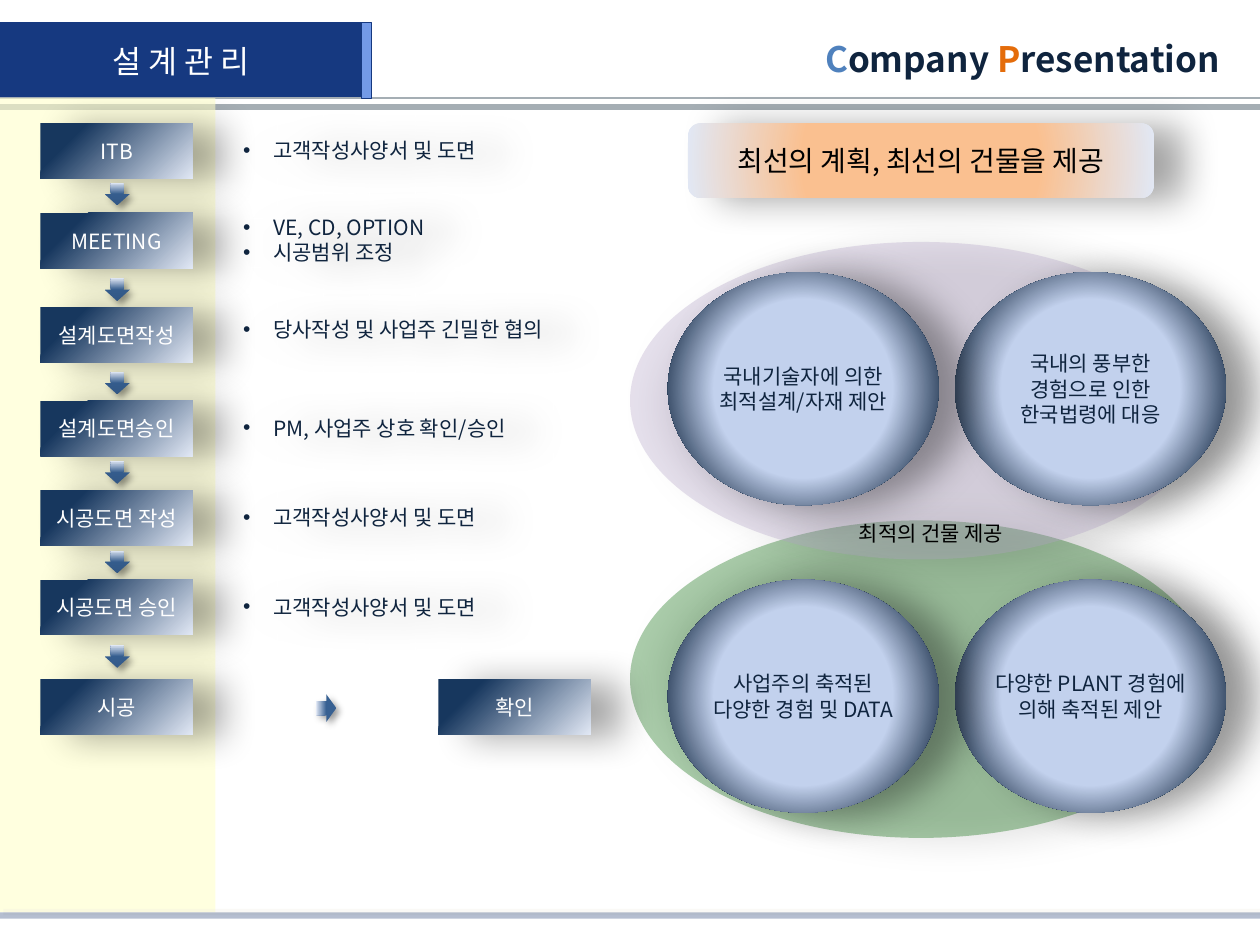
from dataclasses import dataclass

from lxml import etree
from pptx import Presentation
from pptx.dml.color import RGBColor
from pptx.enum import shapes, text
from pptx.oxml import parse_xml
from pptx.oxml.ns import nsdecls, qn
from pptx.util import Inches, Pt

FONT = "Noto Sans CJK KR"
C = {"white": "FFFFFF", "black": "000000", "navy": "0F243E", "blue": "4F81BD",
     "orange": "E46C0A", "rule": "A5AEB4", "cream": "FFFFCC", "footer": "002060",
     "title": "163980", "tab": "739AE7", "green": "006600", "purple": "B3A2C7",
     "box": "17375E", "arrow": "376092", "pale": "E1E8F5", "disc": "C2D1ED",
     "peach": "FAC090", "footer_shadow": "EEECE1"}
KIND = shapes.MSO_SHAPE


@dataclass
class Gradient:
    stops: list[tuple[int, str]]
    angle: int | None = None  # None means a circular gradient


@dataclass
class Shadow:
    color: str
    alpha: int
    blur: float
    dist: float
    angle: int


@dataclass
class Step:
    label: str
    top: float
    arrow_top: float | None = None
    note_top: float = 0
    notes: tuple[str, ...] = ()


@dataclass
class Disc:
    label: str
    left: float
    top: float


BOX_FILL = Gradient([(22, C["box"]), (100, C["pale"])], 45)
ARROW_FILL = Gradient([(50, C["arrow"]), (100, C["pale"])], 180)
DISC_FILL = Gradient([(50, C["disc"]), (86, C["navy"]), (100, C["pale"])])
BANNER_FILL = Gradient([(50, C["peach"]), (100, C["pale"])])
DEEP = Shadow(C["black"], 34, 21, 17, 6)
SMALL = Shadow(C["black"], 40, 4, 3, 45)
FOOTER = Shadow(C["footer_shadow"], 100, 0, 2.8, 315)

STEPS = [
    Step("ITB", 0.98, 1.44, 0.9, ("고객작성사양서 및 도면",)),
    Step("MEETING", 1.69, 2.2, 1.61, ("VE, CD, OPTION", "시공범위 조정")),
    Step("설계도면작성", 2.44, 2.94, 2.32, ("당사작성 및 사업주 긴밀한 협의",)),
    Step("설계도면승인", 3.18, 3.65, 3.1, ("PM, 사업주 상호 확인/승인",)),
    Step("시공도면 작성", 3.89, 4.36, 3.81, ("고객작성사양서 및 도면",)),
    Step("시공도면 승인", 4.6, 5.11, 4.52, ("고객작성사양서 및 도면",)),
    Step("시공", 5.39),
]
DISCS = [
    Disc("국내의 풍부한 경험으로 인한 한국법령에 대응", 7.58, 2.16),
    Disc("국내기술자에 의한 최적설계/자재 제안", 5.3, 2.16),
    Disc("다양한 PLANT 경험에 의해 축적된 제안", 7.58, 4.6),
    Disc("사업주의 축적된 다양한 경험 및 DATA", 5.3, 4.6),
]


def set_gradient(sp, grad: Gradient) -> None:
    sp.fill.background()
    stops = "".join(f'<a:gs pos="{pos * 1000}"><a:srgbClr val="{color}"/></a:gs>'
                    for pos, color in grad.stops)
    if grad.angle is None:
        shade = ('<a:path path="circle"><a:fillToRect l="50000" t="50000" '
                 'r="50000" b="50000"/></a:path>')
    else:
        shade = f'<a:lin ang="{grad.angle * 60000}" scaled="0"/>'
    no_fill = sp._element.spPr.find(qn("a:noFill"))
    no_fill.getparent().replace(no_fill, parse_xml(
        f'<a:gradFill {nsdecls("a")} rotWithShape="1"><a:gsLst>{stops}</a:gsLst>'
        f'{shade}</a:gradFill>'))


def set_shadow(sp, shadow: Shadow) -> None:
    sp._element.spPr.find(qn("a:effectLst")).append(parse_xml(
        f'<a:outerShdw {nsdecls("a")} blurRad="{Pt(shadow.blur)}" '
        f'dist="{Pt(shadow.dist)}" dir="{shadow.angle * 60000}" algn="tl" '
        f'rotWithShape="0"><a:srgbClr val="{shadow.color}">'
        f'<a:alpha val="{shadow.alpha * 1000}"/></a:srgbClr></a:outerShdw>'))


def add_shape(s, kind, left: float, top: float, width: float, height: float,
              fill: str | Gradient | None = None, alpha: int = 100,
              line: str | None = None, shadow: Shadow | None = None):
    sp = s.shapes.add_shape(kind, *map(Inches, (left, top, width, height)))
    sp.shadow.inherit = False
    if isinstance(fill, Gradient):
        set_gradient(sp, fill)
    elif fill:
        sp.fill.solid()
        sp.fill.fore_color.rgb = RGBColor.from_string(fill)
        if alpha < 100:
            color = sp._element.spPr.find(qn("a:solidFill"))[0]
            etree.SubElement(color, qn("a:alpha"), val=str(alpha * 1000))
    else:
        sp.fill.background()
    if line:
        sp.line.color.rgb = RGBColor.from_string(line)
        sp.line.width = Pt(0.75)
    else:
        sp.line.fill.background()
    if shadow:
        set_shadow(sp, shadow)
    return sp


def add_run(p, words: str, size: float, color: str, bold: bool = False) -> None:
    r = p.add_run()
    r.text = words
    r.font.size, r.font.bold, r.font.name = Pt(size), bold, FONT
    r.font.color.rgb = RGBColor.from_string(color)
    etree.SubElement(r.font._element, qn("a:ea"), typeface=FONT)


def write(sp, words: str, size: float, color: str, inset: bool = False) -> None:
    """Write one centred line in the middle of a shape."""
    tf = sp.text_frame
    tf.word_wrap = True
    tf.vertical_anchor = text.MSO_ANCHOR.MIDDLE
    if not inset:
        tf.margin_left = tf.margin_right = tf.margin_top = tf.margin_bottom = 0
    p = tf.paragraphs[0]
    p.alignment = text.PP_ALIGN.CENTER
    add_run(p, words, size, color)


def add_text(s, left: float, top: float, width: float, height: float):
    """Add a centred text box and return its paragraph."""
    tf = s.shapes.add_textbox(*map(Inches, (left, top, width, height))).text_frame
    tf.word_wrap = True
    tf.auto_size = text.MSO_AUTO_SIZE.SHAPE_TO_FIT_TEXT
    p = tf.paragraphs[0]
    p.alignment = text.PP_ALIGN.CENTER
    return p


def add_rule(s, y: float, width: float) -> None:
    line = s.shapes.add_connector(shapes.MSO_CONNECTOR.STRAIGHT,
                                  0, Inches(y), Inches(10), Inches(y))
    line.line.color.rgb = RGBColor.from_string(C["rule"])
    line.line.width = Pt(width)
    etree.SubElement(line._element.spPr, qn("a:effectLst"))


def add_box(s, label: str, left: float, top: float) -> None:
    sp = add_shape(s, KIND.RECTANGLE, left, top, 1.21, 0.44, BOX_FILL, shadow=DEEP)
    write(sp, label, 12, C["white"])


def add_notes(s, step: Step) -> None:
    sp = add_shape(s, KIND.ROUNDED_RECTANGLE, 1.9, step.note_top, 2.69, 0.59, shadow=DEEP)
    tf = sp.text_frame
    tf.word_wrap = True
    tf.vertical_anchor = text.MSO_ANCHOR.MIDDLE
    tf.margin_left = tf.margin_right = tf.margin_top = tf.margin_bottom = 0
    for i, note in enumerate(step.notes):
        p = tf.add_paragraph() if i else tf.paragraphs[0]
        p.alignment = text.PP_ALIGN.LEFT
        pPr = p._p.get_or_add_pPr()
        pPr.set("marL", str(Inches(0.24)))
        pPr.set("indent", str(-Inches(0.24)))
        etree.SubElement(pPr, qn("a:buFont"), typeface="Arial")
        etree.SubElement(pPr, qn("a:buChar"), char="•")
        add_run(p, note, 12, C["navy"])


def add_title(s) -> None:
    sp = s.shapes.title
    sp.left, sp.top, sp.width, sp.height = map(Inches, (0, 0.18, 2.87, 0.6))
    sp.fill.solid()
    sp.fill.fore_color.rgb = RGBColor.from_string(C["title"])
    sp.line.color.rgb = RGBColor.from_string(C["title"])
    sp.line.width = Pt(0.75)
    write(sp, "설 계 관 리", 18, C["white"], inset=True)
    sp.text_frame.auto_size = text.MSO_AUTO_SIZE.NONE
    sp.text_frame.word_wrap = False


def main() -> None:
    prs = Presentation()
    prs.slide_width, prs.slide_height = Inches(10), Inches(7.5)
    s = prs.slides.add_slide(prs.slide_layouts[5])

    add_rule(s, 0.78, 1.32)
    add_rule(s, 0.85, 3.25)
    p = add_text(s, 6.42, 0.25, 3.39, 0.44)
    p.space_after = Pt(14)
    for words, color in (("C", "blue"), ("ompany ", "navy"),
                         ("P", "orange"), ("resentation", "navy")):
        add_run(p, words, 20, C[color], bold=True)
    add_shape(s, KIND.RECTANGLE, 0, 0.78, 1.71, 6.46, C["cream"], 61)
    add_shape(s, KIND.RECTANGLE, 0, 7.24, 10, 0.05, C["footer"], 29, shadow=FOOTER)
    add_shape(s, KIND.RECTANGLE, 2.87, 0.18, 0.08, 0.6, C["tab"], line=C["title"])
    add_title(s)

    for top, color in ((4.13, "green"), (1.92, "purple")):
        add_shape(s, KIND.OVAL, 5, top, 4.62, 2.52, C[color], 33, shadow=DEEP)
    for step in STEPS:
        add_box(s, step.label, 0.32, step.top)
        if step.notes:
            add_notes(s, step)
        if step.arrow_top:
            arrow = add_shape(s, KIND.STRIPED_RIGHT_ARROW, 0.84, step.arrow_top,
                              0.18, 0.2, ARROW_FILL, shadow=SMALL)
            arrow.rotation = 90
    add_shape(s, KIND.STRIPED_RIGHT_ARROW, 2.51, 5.51, 0.16, 0.22, ARROW_FILL, shadow=SMALL)
    add_box(s, "확인", 3.48, 5.39)

    for disc in DISCS:
        sp = add_shape(s, KIND.OVAL, disc.left, disc.top, 2.15, 1.85, DISC_FILL, shadow=DEEP)
        write(sp, disc.label, 12, C["navy"])
    banner = add_shape(s, KIND.ROUNDED_RECTANGLE, 5.46, 0.98, 3.7, 0.59,
                       BANNER_FILL, shadow=DEEP)
    write(banner, "최선의 계획, 최선의 건물을 제공", 16, C["black"], inset=True)
    add_run(add_text(s, 5.71, 4.08, 3.36, 0.3), "최적의 건물 제공", 12, C["black"])
    prs.save("out.pptx")


if __name__ == "__main__":
    main()
